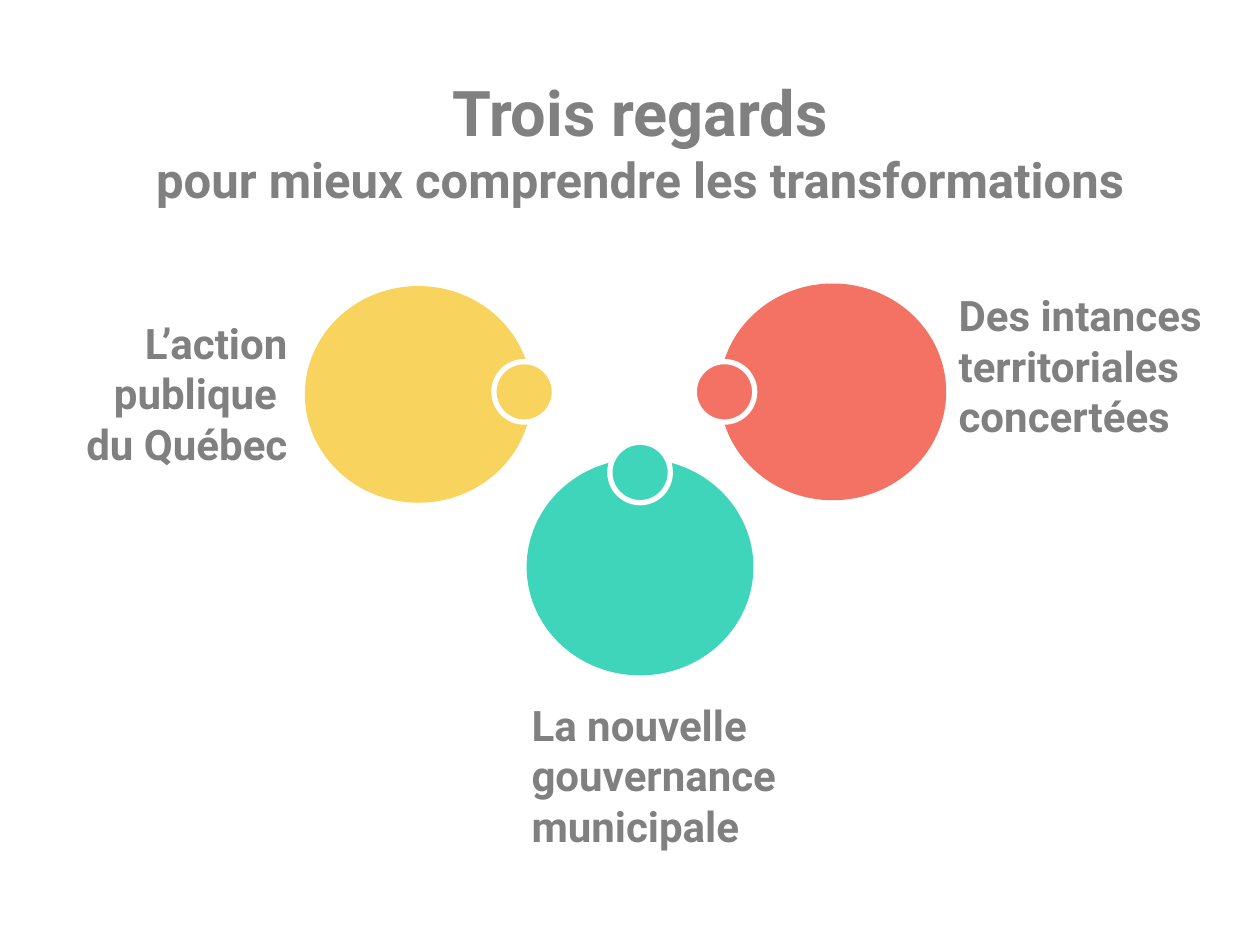
import pptx
import pptx.dml.color
import pptx.enum.shapes
import pptx.enum.text
import pptx.util
from pptx.util import Inches

RGBColor = pptx.dml.color.RGBColor
GREY = RGBColor(0x80, 0x80, 0x80)
WHITE = RGBColor(0xFF, 0xFF, 0xFF)
RED = RGBColor(0xF4, 0x72, 0x64)
GREEN = RGBColor(0x3F, 0xD5, 0xBA)
YELLOW = RGBColor(0xF8, 0xD3, 0x5E)
LEFT = pptx.enum.text.PP_ALIGN.LEFT
CENTER = pptx.enum.text.PP_ALIGN.CENTER
RIGHT = pptx.enum.text.PP_ALIGN.RIGHT


def add_run(paragraph, text, size):
    run = paragraph.add_run()
    run.text = text
    run.font.name = "Roboto"
    run.font.size = pptx.util.Pt(size)
    run.font.bold = True
    run.font.color.rgb = GREY


def add_circle(group, left, top, width, height, color):
    circle = group.shapes.add_shape(
        pptx.enum.shapes.MSO_SHAPE.OVAL,
        Inches(left), Inches(top), Inches(width), Inches(height))
    circle.shadow.inherit = False
    circle.fill.solid()
    circle.fill.fore_color.rgb = color
    circle.line.fill.background()
    return circle


presentation = pptx.Presentation()
presentation.slide_width = Inches(10)
presentation.slide_height = Inches(7.5)
slide = presentation.slides.add_slide(presentation.slide_layouts[6])

labels = [
    (0.21, 2.47, 2.17, 1.31, RIGHT, ["L’action publique ", "du Québec"]),
    (7.51, 2.25, 2.17, 1.72, LEFT, ["Des intances territoriales concertées"]),
    (4.12, 5.5, 2.41, 1.31, LEFT, ["La nouvelle gouvernance municipale"]),
]
for left, top, width, height, alignment, lines in labels:
    label = slide.shapes.add_textbox(
        Inches(left), Inches(top), Inches(width), Inches(height))
    frame = label.text_frame
    frame.word_wrap = True
    for index, line in enumerate(lines):
        paragraph = frame.add_paragraph() if index else frame.paragraphs[0]
        paragraph.alignment = alignment
        add_run(paragraph, line, 24)

title = slide.shapes.add_textbox(Inches(0.58), Inches(0.92), Inches(9), Inches(0.4))
title.text_frame.word_wrap = True
title.text_frame.vertical_anchor = pptx.enum.text.MSO_ANCHOR.MIDDLE
paragraph = title.text_frame.paragraphs[0]
paragraph.alignment = CENTER
add_run(paragraph, "Trois regards", 36)
paragraph.add_line_break()
add_run(paragraph, "pour mieux comprendre les transformations", 28)

perspectives = [
    (RED, 5.71, 2.25, 5.51, 2.87),
    (GREEN, 4.18, 3.64, 4.84, 3.51),
    (YELLOW, 2.42, 2.27, 3.92, 2.87),
]
for color, disc_left, disc_top, knob_left, knob_top in perspectives:
    group = slide.shapes.add_group_shape()
    add_circle(group, disc_left, disc_top, 1.8, 1.72, color)
    knob = add_circle(group, knob_left, knob_top, 0.48, 0.48, color)
    knob.line.color.rgb = WHITE
    knob.line.width = pptx.util.Pt(3)

presentation.save("out.pptx")
